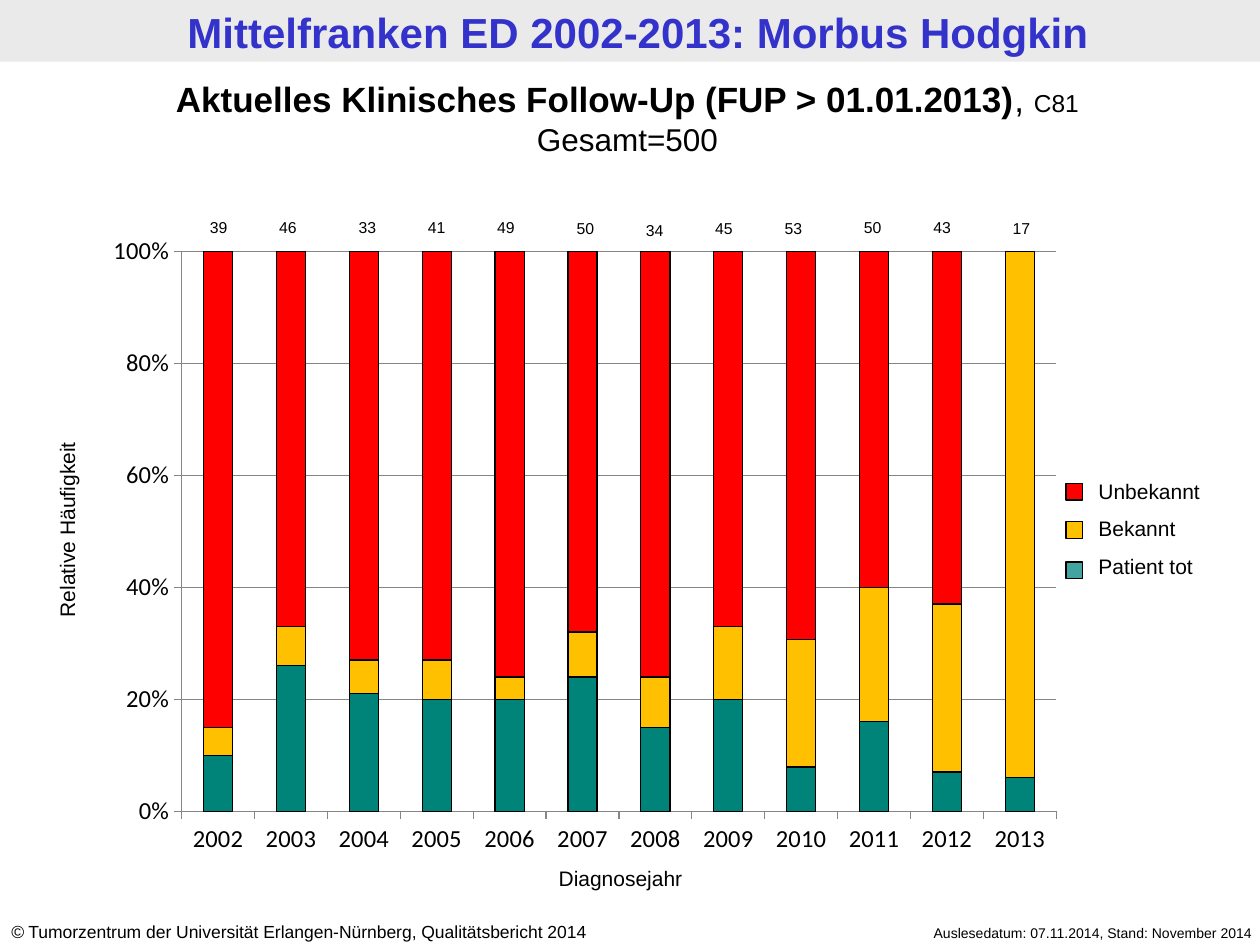
import pptx
import pptx.chart.data
import pptx.dml.color
import pptx.enum.chart
import pptx.enum.shapes
import pptx.enum.text
import pptx.oxml.ns
import pptx.util
from lxml import etree

Pt = pptx.util.Pt
RGB = pptx.dml.color.RGBColor
ALIGN = pptx.enum.text.PP_ALIGN
ANCHOR = pptx.enum.text.MSO_ANCHOR

BLACK = RGB(0, 0, 0)
BLUE = RGB(0x33, 0x33, 0xCC)
BAND_GREY = RGB(0xEA, 0xEA, 0xEA)
GRID_GREY = RGB(0x86, 0x86, 0x86)
TEAL = RGB(0, 0x83, 0x78)
KEY_TEAL = RGB(0, 0x83, 0x80)
AMBER = RGB(0xFF, 0xC0, 0)
RED = RGB(0xFF, 0, 0)

title = "Mittelfranken ED 2002-2013: Morbus Hodgkin"
subtitle = [
    [("Aktuelles Klinisches Follow-Up (FUP > 01.01.2013)", {"size": Pt(20), "bold": True}),
     (", ", {"size": Pt(20)}), ("C81", {"size": Pt(14)})],
    [("Gesamt=500", {"size": Pt(18)})],
]
copyright_line = [
    ("©", {"italic": True}),
    (" Tumorzentrum der Universität Erlangen-Nürnberg, Qualitätsbericht 2014", {}),
]
status_line = "Auslesedatum: 07.11.2014, Stand: November 2014"
years = [str(year) for year in range(2002, 2014)]
totals = [39, 46, 33, 41, 49, 50, 34, 45, 53, 50, 43, 17]
total_tops = [121, 121, 121, 121, 121, 121.7, 122.4, 121.7, 121.7, 121, 121, 121.7]
years_after_wide_gap = {"2004", "2007", "2011", "2013"}
shares = [
    ("Patient tot", TEAL, [10, 26, 21, 20, 20, 24, 15, 20, 8, 16, 7, 6]),
    ("Bekannt", AMBER, [5, 7, 6, 7, 4, 8, 9, 13, 23, 24, 30, 94]),
    ("Unbekannt", RED, [85, 67, 73, 73, 76, 68, 76, 67, 70, 60, 63, 0]),
]
legend_keys = [("Unbekannt", RED, 276.4), ("Bekannt", AMBER, 298.2), ("Patient tot", KEY_TEAL, 321.2)]


def apply(target, values):
    for name, value in values.items():
        setattr(target, name, value)


def style(font, color=BLACK, **values):
    apply(font, values)
    font.color.rgb = color


def outline(line, color=BLACK):
    line.color.rgb = color
    line.width = Pt(0.75)


def add_text(slide, box, paragraphs, size=12, align=ALIGN.LEFT, color=BLACK,
             bold=False, gap=0, anchor=ANCHOR.TOP, rotation=0):
    holder = slide.shapes.add_textbox(*map(Pt, box))
    holder.rotation = rotation
    apply(holder.text_frame, {"word_wrap": True, "vertical_anchor": anchor})
    for index, runs in enumerate(paragraphs):
        paragraph = holder.text_frame.paragraphs[0] if index == 0 else holder.text_frame.add_paragraph()
        paragraph.alignment = align
        if index and gap:
            paragraph.space_before = Pt(gap)
        for words, values in [(runs, {})] if isinstance(runs, str) else runs:
            run = paragraph.add_run()
            run.text = words
            style(run.font, color, **{"name": "Arial", "size": Pt(size), "bold": bold, **values})


def add_block(slide, box, color):
    block = slide.shapes.add_shape(pptx.enum.shapes.MSO_SHAPE.RECTANGLE, *map(Pt, box))
    block.shadow.inherit = False
    block.fill.solid()
    block.fill.fore_color.rgb = color
    return block


def fix_plot_area(chart, **fractions):
    plot_area = chart.plots[0]._element.getparent()
    for old in plot_area.findall(pptx.oxml.ns.qn("c:layout")):
        plot_area.remove(old)
    layout = etree.Element(pptx.oxml.ns.qn("c:layout"))
    manual = etree.SubElement(layout, pptx.oxml.ns.qn("c:manualLayout"))
    settings = {"layoutTarget": "inner", "xMode": "edge", "yMode": "edge", **fractions}
    for name, value in settings.items():
        etree.SubElement(manual, pptx.oxml.ns.qn("c:" + name)).set("val", str(value))
    plot_area.insert(0, layout)


def add_follow_up_chart(slide):
    data = pptx.chart.data.CategoryChartData()
    data.categories = years
    for name, _, values in shares:
        data.add_series(name, values)
    chart = slide.shapes.add_chart(
        pptx.enum.chart.XL_CHART_TYPE.COLUMN_STACKED_100,
        *map(Pt, (53.3, 128.9, 561.6, 367.9)), data).chart
    apply(chart, {"has_legend": False, "has_title": False})
    style(chart.font, name="Calibri", size=Pt(18))
    plot = chart.plots[0]
    apply(plot, {"gap_width": 150, "overlap": 100, "vary_by_categories": False})
    for series, (_, color, _) in zip(plot.series, shares):
        series.format.fill.solid()
        series.format.fill.fore_color.rgb = color
        outline(series.format.line)
    for axis in (chart.category_axis, chart.value_axis):
        axis.major_tick_mark = pptx.enum.chart.XL_TICK_MARK.OUTSIDE
        style(axis.tick_labels.font, name="Calibri", size=Pt(14))
        outline(axis.format.line, GRID_GREY)
    apply(chart.value_axis, {"minimum_scale": 0, "maximum_scale": 1, "major_unit": 0.2,
                             "has_major_gridlines": True})
    apply(chart.value_axis.tick_labels, {"number_format": "0%", "number_format_is_linked": False})
    outline(chart.value_axis.major_gridlines.format.line, GRID_GREY)
    fix_plot_area(chart, x=0.09, y=0.04, w=0.89, h=0.87)


def add_totals(slide):
    left = 105.1
    for year, total, top in zip(years, totals, total_tops):
        if year in years_after_wide_gap:
            left += 5.8
        add_text(slide, (left, top, 39.6, 18), [str(total)], 9, ALIGN.CENTER)
        left += 39.6


def add_legend(slide):
    add_text(slide, (620.6, 270, 102.2, 65.5), [name for name, _, _ in legend_keys], gap=6.9)
    for _, color, top in legend_keys:
        key = add_block(slide, (609.1, top, 9.4, 9.4), color)
        outline(key.line)
        if color == KEY_TEAL:
            tint = key._element.spPr.find(".//" + pptx.oxml.ns.qn("a:srgbClr"))
            etree.SubElement(tint, pptx.oxml.ns.qn("a:alpha")).set("val", "74000")


def main():
    deck = pptx.Presentation()
    apply(deck, {"slide_width": Pt(720), "slide_height": Pt(540)})
    slide = deck.slides.add_slide(deck.slide_layouts[6])
    add_block(slide, (0, 0, 720, 35.3), BAND_GREY).line.fill.background()
    add_text(slide, (4.5, 0.7, 720, 35.3), [title], 24, ALIGN.CENTER, BLUE, True, anchor=ANCHOR.MIDDLE)
    add_text(slide, (478.8, 524.9, 244, 17.3), [status_line], 8, ALIGN.RIGHT)
    add_text(slide, (-0.7, 522.7, 377.3, 19.4), [copyright_line], 10)
    add_follow_up_chart(slide)
    add_text(slide, (-48.2, 291.6, 173.5, 22.3), ["Relative Häufigkeit"], align=ALIGN.CENTER, rotation=270)
    add_text(slide, (273.6, 491, 162, 22.3), ["Diagnosejahr"], align=ALIGN.CENTER)
    add_text(slide, (-2.9, 41, 722.9, 53.3), subtitle, align=ALIGN.CENTER)
    add_totals(slide)
    add_legend(slide)
    deck.save("out.pptx")


if __name__ == "__main__":
    main()
